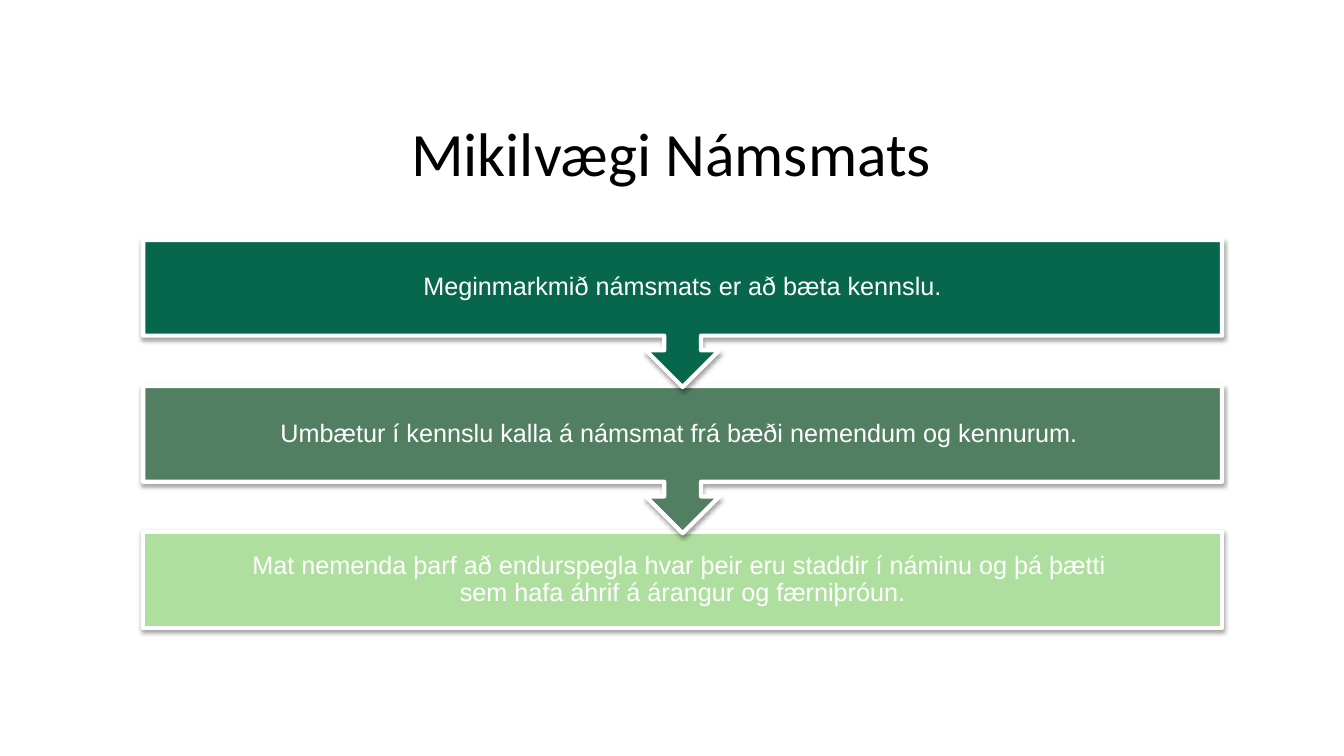
from dataclasses import dataclass

from lxml import etree
from pptx import Presentation
from pptx.dml.color import RGBColor
from pptx.enum.shapes import MSO_SHAPE
from pptx.enum.text import MSO_ANCHOR, PP_ALIGN
from pptx.oxml import parse_xml
from pptx.oxml.ns import nsdecls
from pptx.shapes.autoshape import Shape
from pptx.slide import Slide
from pptx.util import Inches, Pt

RECT = MSO_SHAPE.RECTANGLE
CALLOUT = MSO_SHAPE.UP_ARROW_CALLOUT
MIDDLE = MSO_ANCHOR.MIDDLE
CENTER = PP_ALIGN.CENTER

BLACK = RGBColor(0x00, 0x00, 0x00)
WHITE = RGBColor(0xFF, 0xFF, 0xFF)
DARK_GREEN = RGBColor(0x07, 0x67, 0x4D)
MID_GREEN = RGBColor(0x52, 0x7F, 0x62)
LIGHT_GREEN = RGBColor(0xAF, 0xDF, 0x9F)

STEP_LEFT, STEP_TOP, STEP_WIDTH = 1.42, 2.38, 10.7
STEP_PITCH = 1.45
BOX_HEIGHT, CALLOUT_HEIGHT = 0.95, 1.46
CALLOUT_ADJUSTMENTS = (0.25, 0.25, 0.25, 0.65)

TITLE_FONT = {"name": "Calibri", "size": Pt(44)}
STEP_FONT = {"name": "Arial", "size": Pt(18)}


@dataclass
class Step:
    text: str
    fill: RGBColor


STEPS = [
    Step("Meginmarkmið námsmats er að bæta kennslu.", DARK_GREEN),
    Step("Umbætur í kennslu kalla á námsmat frá bæði nemendum og kennurum. ", MID_GREEN),
    Step("Mat nemenda þarf að endurspegla hvar þeir eru staddir í náminu og þá þætti \v"
         "sem hafa áhrif á árangur og færniþróun.", LIGHT_GREEN),
]


def add_soft_shadow(sp: Shape) -> None:
    sp.shadow.inherit = False
    effects = sp._element.spPr.find("{*}effectLst")
    shadow = parse_xml(
        f'<a:outerShdw {nsdecls("a")} blurRad="{Pt(3.1)}" dist="{Pt(1.6)}" '
        'dir="5400000" algn="ctr" rotWithShape="0"/>')
    color = etree.SubElement(shadow, shadow.tag.replace("outerShdw", "srgbClr"), val="000000")
    etree.SubElement(color, shadow.tag.replace("outerShdw", "alpha"), val="37000")
    effects.append(shadow)


def add_text(s: Slide, text: str, box: tuple[float, float, float, float],
             font: dict, color: RGBColor, inset_x: float, inset_y: float) -> None:
    tf = s.shapes.add_textbox(*map(Inches, box)).text_frame
    frame_format = {
        "word_wrap": True, "vertical_anchor": MIDDLE,
        "margin_left": Inches(inset_x), "margin_right": Inches(inset_x),
        "margin_top": Inches(inset_y), "margin_bottom": Inches(inset_y),
    }
    for name, value in frame_format.items():
        setattr(tf, name, value)
    p = tf.paragraphs[0]
    p.text = text
    p.alignment = CENTER
    p.line_spacing = 0.9
    for r in p.runs:
        for name, value in font.items():
            setattr(r.font, name, value)
        r.font.color.rgb = color


def add_step(s: Slide, step: Step, top: float, is_last: bool) -> None:
    """Draw one step; every step but the last points down to the next."""
    height = BOX_HEIGHT if is_last else CALLOUT_HEIGHT
    sp = s.shapes.add_shape(RECT if is_last else CALLOUT, Inches(STEP_LEFT), Inches(top),
                            Inches(STEP_WIDTH), Inches(height))
    if not is_last:
        sp.rotation = 180
        for i, value in enumerate(CALLOUT_ADJUSTMENTS):
            sp.adjustments[i] = value
    sp.fill.solid()
    sp.fill.fore_color.rgb = step.fill
    sp.line.color.rgb = WHITE
    sp.line.width = Pt(3)
    add_soft_shadow(sp)
    add_text(s, step.text, (STEP_LEFT, top, STEP_WIDTH, BOX_HEIGHT),
             STEP_FONT, WHITE, 0.14, 0.14)


def main() -> None:
    prs = Presentation()
    prs.slide_width, prs.slide_height = Inches(13.33), Inches(7.5)
    s = prs.slides.add_slide(prs.slide_layouts[6])
    add_text(s, "Mikilvægi Námsmats", (0.91, 0.91, 11.5, 1.29), TITLE_FONT, BLACK, 0.1, 0.05)
    # Bottom step first, so each arrow tip overlaps the step below it
    for i, step in reversed(list(enumerate(STEPS))):
        add_step(s, step, STEP_TOP + i * STEP_PITCH, i == len(STEPS) - 1)
    prs.save("out.pptx")


if __name__ == "__main__":
    main()
